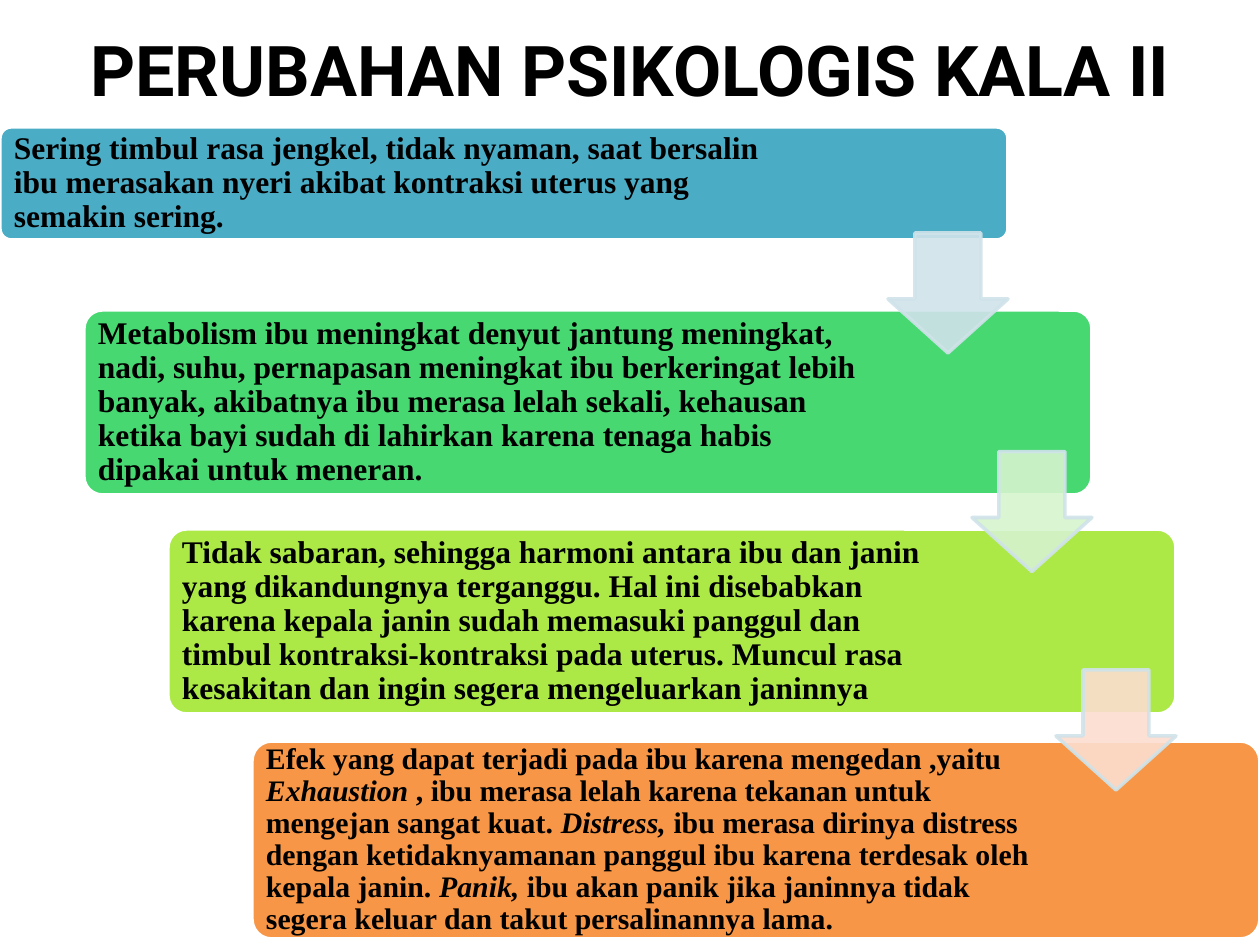
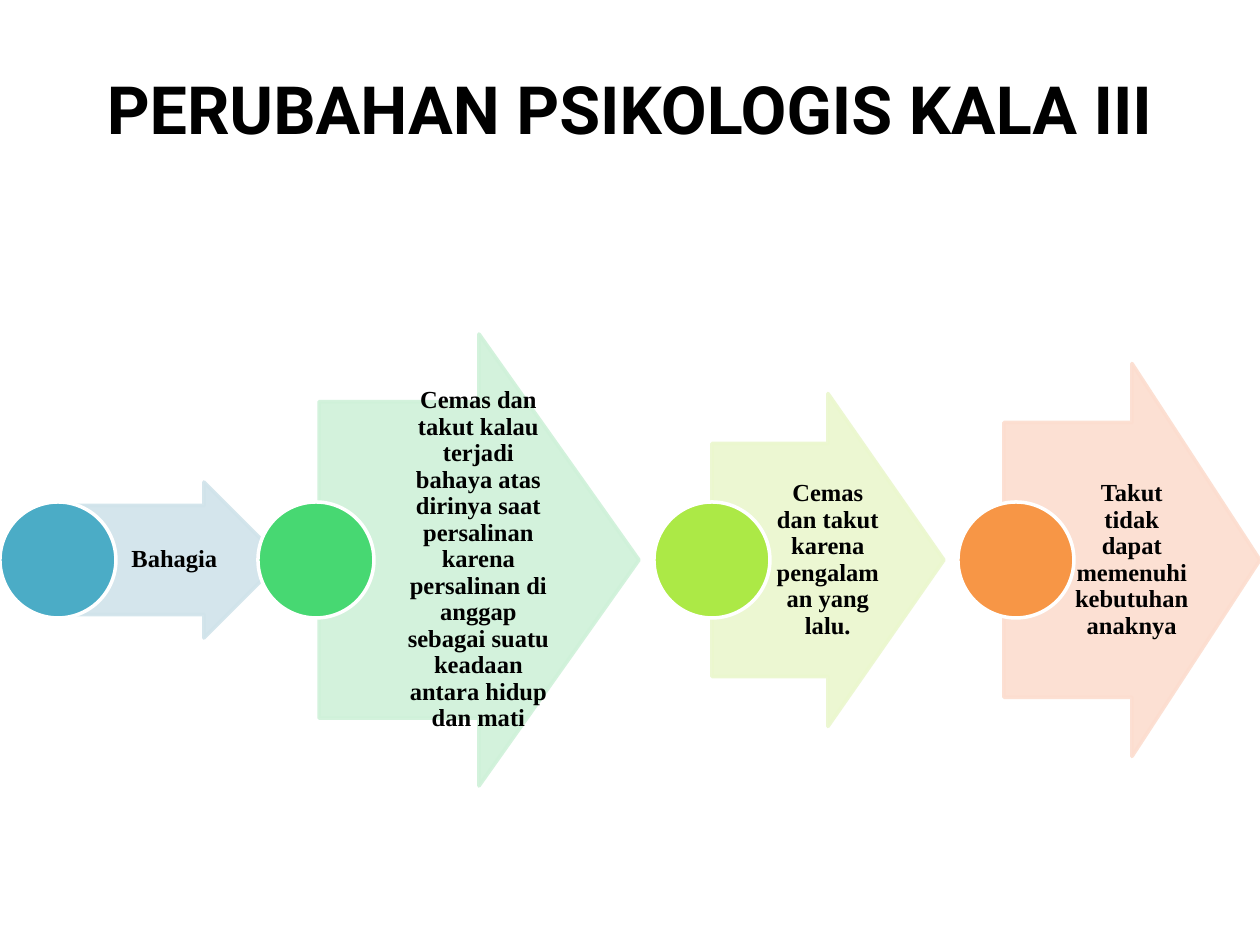
import pptx
import pptx.util
import pptx.dml.color
import pptx.enum.shapes
import pptx.enum.text
import pptx.oxml
import pptx.oxml.ns

# Content
COLORS = {
    "teal": "4BACC6", "green": "47D872", "lime": "ACE946", "orange": "F79646",
    "ice": "D0E3EA", "mint": "CFF1D9", "leaf": "D6F4CE", "cream": "EBF7CE",
    "peach": "FCDDCF", "white": "FFFFFF", "black": "000000",
}
HUES = ["teal", "green", "lime", "orange"]

# Stairs: top, height, text size, runs as (text, italic)
STAIRS = [
    (127, 113, 18, [("Sering timbul rasa jengkel, tidak nyaman, saat bersalin ibu "
                     "merasakan nyeri akibat kontraksi uterus yang semakin sering.", False)]),
    (310, 185, 18, [("Metabolism ibu meningkat denyut jantung meningkat, nadi, suhu, "
                     "pernapasan meningkat ibu berkeringat lebih banyak, akibatnya ibu "
                     "merasa lelah sekali, kehausan ketika bayi sudah di lahirkan karena "
                     "tenaga habis dipakai untuk meneran.", False)]),
    (529, 185, 18, [("Tidak sabaran, sehingga harmoni antara ibu dan janin yang "
                     "dikandungnya terganggu. Hal ini disebabkan karena kepala janin "
                     "sudah memasuki panggul dan timbul kontraksi-kontraksi pada uterus. "
                     "Muncul rasa kesakitan dan ingin segera mengeluarkan janinnya", False)]),
    (741, 198, 17, [("Efek yang dapat terjadi pada ibu karena mengedan ,yaitu ", False),
                    ("Exhaustion", True),
                    (" , ibu merasa lelah karena tekanan untuk mengejan sangat kuat. ", False),
                    ("Distress, ", True),
                    ("ibu merasa dirinya distress dengan ketidaknyamanan panggul ibu "
                     "karena terdesak oleh kepala janin. ", False),
                    ("Panik, ", True),
                    ("ibu akan panik jika janinnya tidak segera keluar dan takut "
                     "persalinannya lama.", False)]),
]
DROPS = ["ice", "leaf", "peach"]

# Stages: circle left, arrow left, arrow width, arrow height, tint, text
STAGES = [
    (0, 67, 215, 156, "ice", "Bahagia"),
    (258, 319, 320, 452, "mint", "Cemas dan takut kalau terjadi bahaya atas dirinya saat "
     "persalinan karena persalinan di anggap sebagai suatu keadaan antara hidup dan mati"),
    (654, 712, 232, 333, "cream", "Cemas dan takut karena pengalaman yang lalu."),
    (958, 1004, 256, 393, "peach", "Takut tidak dapat memenuhi kebutuhan anaknya"),
]

# Shared measures
WIDE, HIGH = 1260, 945
SCALE = 914400 / 126
SERIF, SANS = "Times New Roman", "Roboto"
KIND = pptx.enum.shapes.MSO_SHAPE
ALIGN = pptx.enum.text.PP_ALIGN


def emu(*sizes):
    return [round(size * SCALE) for size in sizes]


def rgb(name):
    return pptx.dml.color.RGBColor.from_string(COLORS[name])


def add_form(slide, kind, box, fill, edge, adjust=()):
    form = slide.shapes.add_shape(kind, *emu(*box))
    form.shadow.inherit = False
    for place, value in enumerate(adjust):
        form.adjustments[place] = value
    form.fill.solid()
    form.fill.fore_color.rgb = rgb(fill)
    form.line.color.rgb = rgb(edge)
    form.line.width = pptx.util.Pt(2)
    return form


def add_arrow(slide, kind, box, fill, edge, adjust):
    """Block arrow at 90% opacity with rounded corners."""
    form = add_form(slide, kind, box, fill, edge, adjust)
    qn = pptx.oxml.ns.qn
    for color in form._element.spPr.iter(qn("a:srgbClr")):
        color.append(color.makeelement(qn("a:alpha"), {"val": "90000"}))
    line = form.line._get_or_add_ln()
    line.append(line.makeelement(qn("a:round"), {}))


def add_text(slide, box, runs, size, font=SERIF, align=ALIGN.LEFT,
             pads=(9, 9, 9, 9), space=0.9):
    frame = slide.shapes.add_textbox(*emu(*box)).text_frame
    frame.word_wrap = True
    frame.vertical_anchor = pptx.enum.text.MSO_ANCHOR.MIDDLE
    (frame.margin_left, frame.margin_top,
     frame.margin_right, frame.margin_bottom) = emu(*pads)
    para = frame.paragraphs[0]
    para.alignment = align
    para.line_spacing = space
    for words, slant in runs:
        run = para.add_run()
        run.text = words
        run.font.name = font
        run.font.size = pptx.util.Pt(size)
        run.font.bold = True
        run.font.italic = slant
        run.font.color.rgb = rgb("black")


def add_page(deck, title, top, size):
    slide = deck.slides.add_slide(deck.slide_layouts[6])
    add_text(slide, (0, top, WIDE, 63), [(title, False)], size, SANS,
             ALIGN.CENTER, space=1.0)
    return slide


def draw_stairs(deck):
    slide = add_page(deck, "PERUBAHAN PSIKOLOGIS KALA II", 37, 40)
    step, width = 84, 1008
    for i, (top, height, size, runs) in enumerate(STAIRS):
        left = i * step
        add_form(slide, KIND.ROUNDED_RECTANGLE, (left, top, width, height),
                 HUES[i], "white", [0.1])
        add_text(slide, (left + 5, top + 5, 793, height - 10), runs, size)
    # Arrows end flush with the right edge of the step above
    side = 120
    for i, tint in enumerate(DROPS):
        box = (width - side + i * step, 233 + i * 218.5, side, side)
        add_arrow(slide, KIND.DOWN_ARROW, box, tint, "ice", [0.55, 0.45])


def draw_stages(deck):
    slide = add_page(deck, "PERUBAHAN PSIKOLOGIS KALA III", 76, 38)
    middle, disc = 560, 116
    for hue, (spot, left, width, height, tint, words) in zip(HUES, STAGES):
        add_arrow(slide, KIND.RIGHT_ARROW, (left, middle - height / 2, width, height),
                  tint, tint, [0.7, 0.5])
        body = 0.7 * height
        add_text(slide, (left + width / 4, middle - body / 2, 0.49 * width, body),
                 [(words, False)], 14, align=ALIGN.CENTER, pads=(5, 1, 3, 1))
        add_form(slide, KIND.OVAL, (spot, middle - disc / 2, disc, disc), hue, "white")


def main():
    deck = pptx.Presentation()
    deck.slide_width, deck.slide_height = emu(WIDE, HIGH)
    draw_stairs(deck)
    draw_stages(deck)
    deck.save("out.pptx")


if __name__ == "__main__":
    main()
